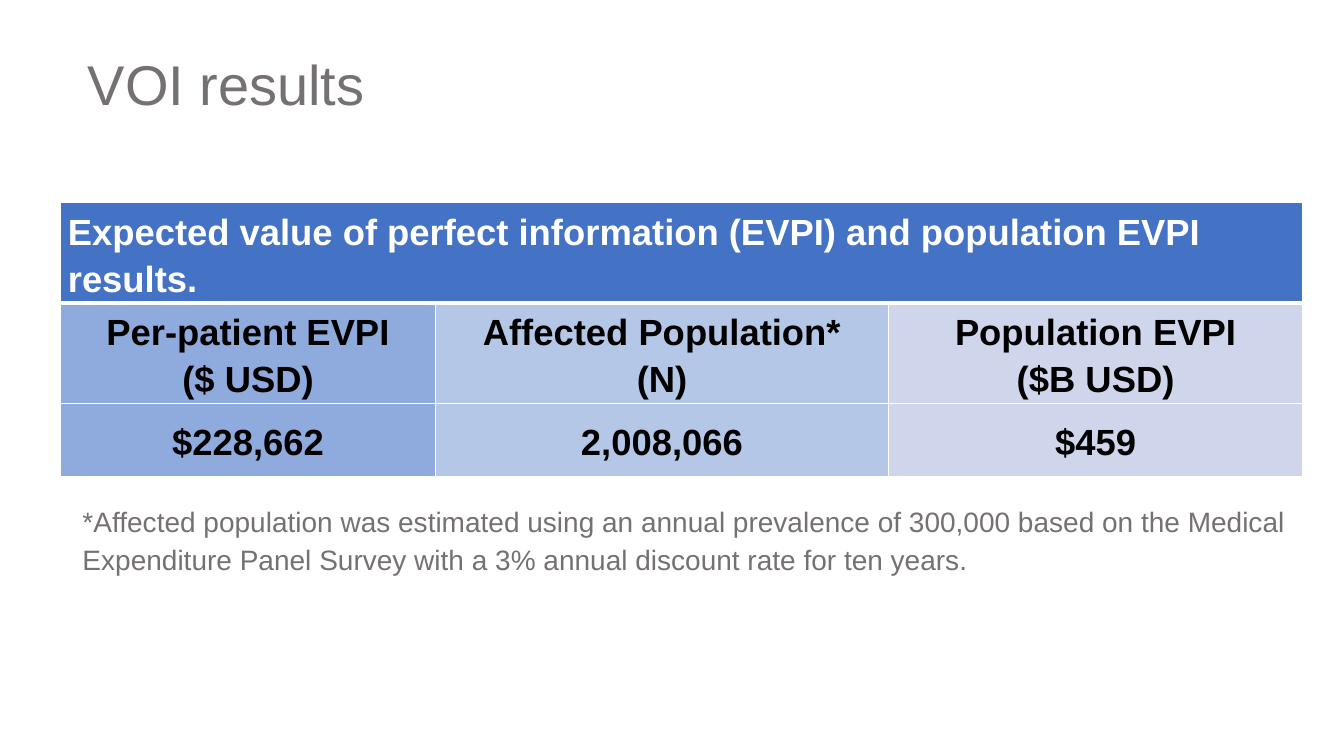
from lxml.etree import SubElement
from pptx import Presentation
from pptx.dml.color import RGBColor
from pptx.enum.text import MSO_ANCHOR as Anchor, MSO_AUTO_SIZE as AutoSize, PP_ALIGN as Align
from pptx.oxml.ns import qn
from pptx.util import Cm, Pt

COLORS = {
    "white": "FFFFFF", "black": "000000", "gray": "767171", "header": "4472C4",
    "patient": "8FAADC", "affected": "B4C7E7", "population": "CFD5EA",
}
TITLE = "VOI results"
HEADER = "Expected value of perfect information (EVPI) and population EVPI results."
FOOTNOTE = (
    "*Affected population was estimated using an annual prevalence of 300,000 "
    "based on the Medical Expenditure Panel Survey with a 3% annual discount rate for ten years."
)
# Heading lines, value, fill, width in cm
COLUMNS = [
    (["Per-patient EVPI", "($ USD)"], "$228,662", "patient", 9.45),
    (["Affected Population*", "(N)"], "2,008,066", "affected", 11.41),
    (["Population EVPI", "($B USD)"], "$459", "population", 10.45),
]
ROW_HEIGHT = 1.83
THIN, THICK = 1, 3


def write(frame, *lines, size, color, bold=False, align=Align.LEFT, spacing=None):
    for index, line in enumerate(lines):
        para = frame.paragraphs[0] if index == 0 else frame.add_paragraph()
        para.alignment = align
        para.line_spacing = spacing
        span = para.add_run()
        span.text = line
        span.font.name = "Arial"
        span.font.size = Pt(size)
        span.font.bold = bold
        span.font.color.rgb = RGBColor.from_string(COLORS[color])


def add_borders(cell, **widths):
    """Draw white cell edges; widths maps L, R, T and B to points."""
    properties = cell._tc.get_or_add_tcPr()
    for side in "LRTB":
        line = SubElement(properties, qn(f"a:ln{side}"), w=str(Pt(widths.get(side, THIN))))
        fill = SubElement(line, qn("a:solidFill"))
        SubElement(fill, qn("a:srgbClr"), val=COLORS["white"])


def format_cell(cell, fill, **borders):
    add_borders(cell, **borders)
    cell.fill.solid()
    cell.fill.fore_color.rgb = RGBColor.from_string(COLORS[fill])
    cell.vertical_anchor = Anchor.MIDDLE
    cell.margin_left = cell.margin_right = Cm(0.18)
    cell.margin_top = cell.margin_bottom = 0


def add_results(page):
    width = sum(column[3] for column in COLUMNS)
    table = page.shapes.add_table(
        3, len(COLUMNS), Cm(1.53), Cm(5.11), Cm(width), Cm(3 * ROW_HEIGHT)
    ).table
    for row in table.rows:
        row.height = Cm(ROW_HEIGHT)
    for index, (heading, value, fill, column_width) in enumerate(COLUMNS):
        table.columns[index].width = Cm(column_width)
        header, label, result = (table.cell(row, index) for row in range(3))
        format_cell(header, "header", B=THICK)
        format_cell(label, fill, T=THICK)
        format_cell(result, fill)
        for cell, lines in ((label, heading), (result, [value])):
            write(cell.text_frame, *lines, size=26, color="black", bold=True,
                  align=Align.CENTER, spacing=1.15)
    title_cell = table.cell(0, 0)
    title_cell.merge(table.cell(0, len(COLUMNS) - 1))
    write(title_cell.text_frame, HEADER, size=26, color="white", bold=True, spacing=1.15)


def main():
    deck = Presentation()
    deck.slide_width, deck.slide_height = Cm(33.87), Cm(19.05)
    page = deck.slides.add_slide(deck.slide_layouts[5])

    title = page.shapes.title
    title.left, title.top, title.width, title.height = Cm(1.96), Cm(1.12), Cm(7.57), Cm(1.96)
    title.text_frame.word_wrap = False
    title.text_frame.auto_size = AutoSize.SHAPE_TO_FIT_TEXT
    title.text_frame.vertical_anchor = Anchor.TOP
    write(title.text_frame, TITLE, size=40, color="gray")

    add_results(page)

    note = page.shapes.add_textbox(Cm(1.83), Cm(12.45), Cm(31.29), Cm(2.24)).text_frame
    note.word_wrap = True
    note.auto_size = AutoSize.SHAPE_TO_FIT_TEXT
    write(note, FOOTNOTE, size=20, color="gray", spacing=1.15)

    deck.save("out.pptx")


if __name__ == "__main__":
    main()
